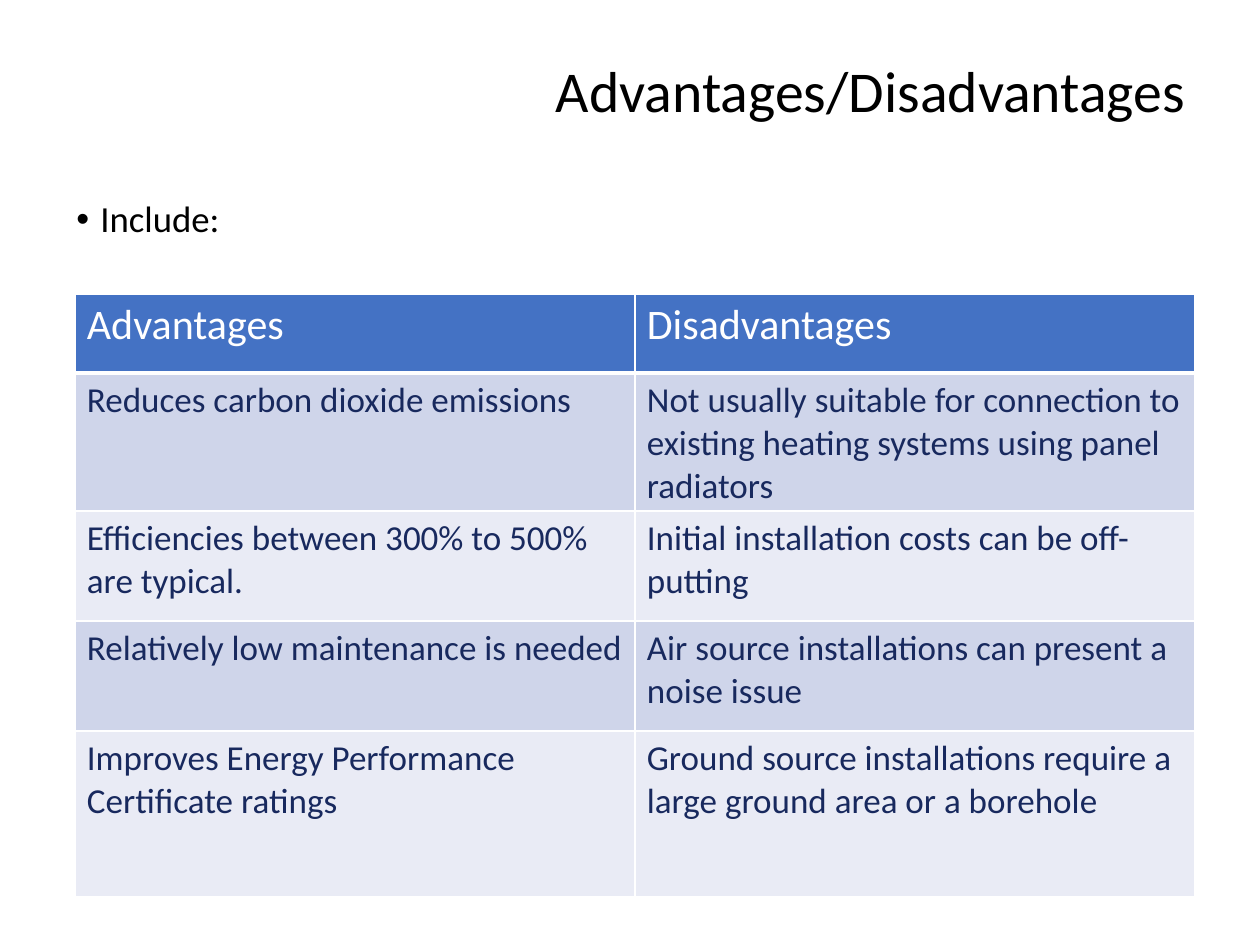
from dataclasses import dataclass

from lxml.etree import SubElement
from pptx import Presentation
from pptx.dml.color import RGBColor
from pptx.enum.text import MSO_ANCHOR, MSO_AUTO_SIZE, PP_ALIGN
from pptx.oxml.ns import qn
from pptx.util import Pt

EMU_PER_PX = 914400 / 126


@dataclass(frozen=True)
class Theme:
    font: str = "Calibri"
    text: str = "000000"
    header_text: str = "FFFFFF"
    cell_text: str = "18295E"
    header_fill: str = "4472C4"
    bands: tuple = ("CFD5EA", "E9EBF5")
    border: str = "FFFFFF"
    title_size: int = 33
    bullet_size: int = 21
    header_size: int = 24
    cell_size: int = 20


THEME = Theme()

ROWS = [
    ("Advantages", "Disadvantages"),
    ("Reduces carbon dioxide emissions",
     "Not usually suitable for connection to existing heating systems using panel radiators"),
    ("Efficiencies between 300% to 500% are typical.",
     "Initial installation costs can be off-putting"),
    ("Relatively low maintenance is needed",
     "Air source installations can present a noise issue"),
    ("Improves Energy Performance Certificate ratings",
     "Ground source installations require a large ground area or a borehole"),
]
ROW_HEIGHTS = [79, 110, 110, 110, 166]
COLUMN_WIDTH = 560


def px(length):
    return round(length * EMU_PER_PX)


def set_values(target, values):
    for name, value in values.items():
        setattr(target, name, value)


def format_font(font, size, color):
    set_values(font, {"name": THEME.font, "size": Pt(size), "bold": False})
    font.color.rgb = RGBColor.from_string(color)


def add_title(page, text):
    title = page.shapes.title
    set_values(title, {"left": px(312), "top": px(26), "width": px(886), "height": px(136)})
    set_values(title.text_frame, {"text": text, "word_wrap": True,
                                  "auto_size": MSO_AUTO_SIZE.NONE,
                                  "vertical_anchor": MSO_ANCHOR.MIDDLE})
    para = title.text_frame.paragraphs[0]
    set_values(para, {"alignment": PP_ALIGN.RIGHT, "line_spacing": 0.9})
    format_font(para.font, THEME.title_size, THEME.text)


def add_bullet(page, text):
    box = page.shapes.add_textbox(px(64), px(195), px(1134), px(624))
    set_values(box.text_frame, {"text": text, "word_wrap": True})
    para = box.text_frame.paragraphs[0]
    para.line_spacing = 0.9
    properties = para._p.get_or_add_pPr()
    properties.set("marL", str(px(24)))
    properties.set("indent", str(-px(24)))
    SubElement(properties, qn("a:buFont"), typeface="Arial")
    SubElement(properties, qn("a:buChar"), char="•")
    format_font(para.font, THEME.bullet_size, THEME.text)


def add_borders(cell, bottom_width):
    properties = cell._tc.get_or_add_tcPr()
    for side, width in {"lnL": 1, "lnR": 1, "lnT": 1, "lnB": bottom_width}.items():
        line = SubElement(properties, qn(f"a:{side}"), w=str(Pt(width)))
        fill = SubElement(line, qn("a:solidFill"))
        SubElement(fill, qn("a:srgbClr"), val=THEME.border)


def format_cell(cell, text, row_index):
    is_header = row_index == 0
    cell.text = text
    set_values(cell, {"margin_left": px(12), "margin_right": px(12),
                      "margin_top": px(6), "margin_bottom": px(6)})
    add_borders(cell, 3 if is_header else 1)
    fill = THEME.header_fill if is_header else THEME.bands[(row_index - 1) % 2]
    cell.fill.solid()
    cell.fill.fore_color.rgb = RGBColor.from_string(fill)
    size = THEME.header_size if is_header else THEME.cell_size
    color = THEME.header_text if is_header else THEME.cell_text
    format_font(cell.text_frame.paragraphs[0].runs[0].font, size, color)


def add_comparison_table(page):
    table = page.shapes.add_table(len(ROWS), 2, px(75), px(294),
                                  px(2 * COLUMN_WIDTH), px(sum(ROW_HEIGHTS))).table
    for column in table.columns:
        column.width = px(COLUMN_WIDTH)
    for row_index, (texts, height) in enumerate(zip(ROWS, ROW_HEIGHTS)):
        table.rows[row_index].height = px(height)
        for column_index, text in enumerate(texts):
            format_cell(table.cell(row_index, column_index), text, row_index)


def main():
    deck = Presentation()
    set_values(deck, {"slide_width": px(1260), "slide_height": px(945)})
    page = deck.slides.add_slide(deck.slide_layouts[5])
    add_title(page, "Advantages/Disadvantages")
    add_bullet(page, "Include:")
    add_comparison_table(page)
    deck.save("out.pptx")


if __name__ == "__main__":
    main()
